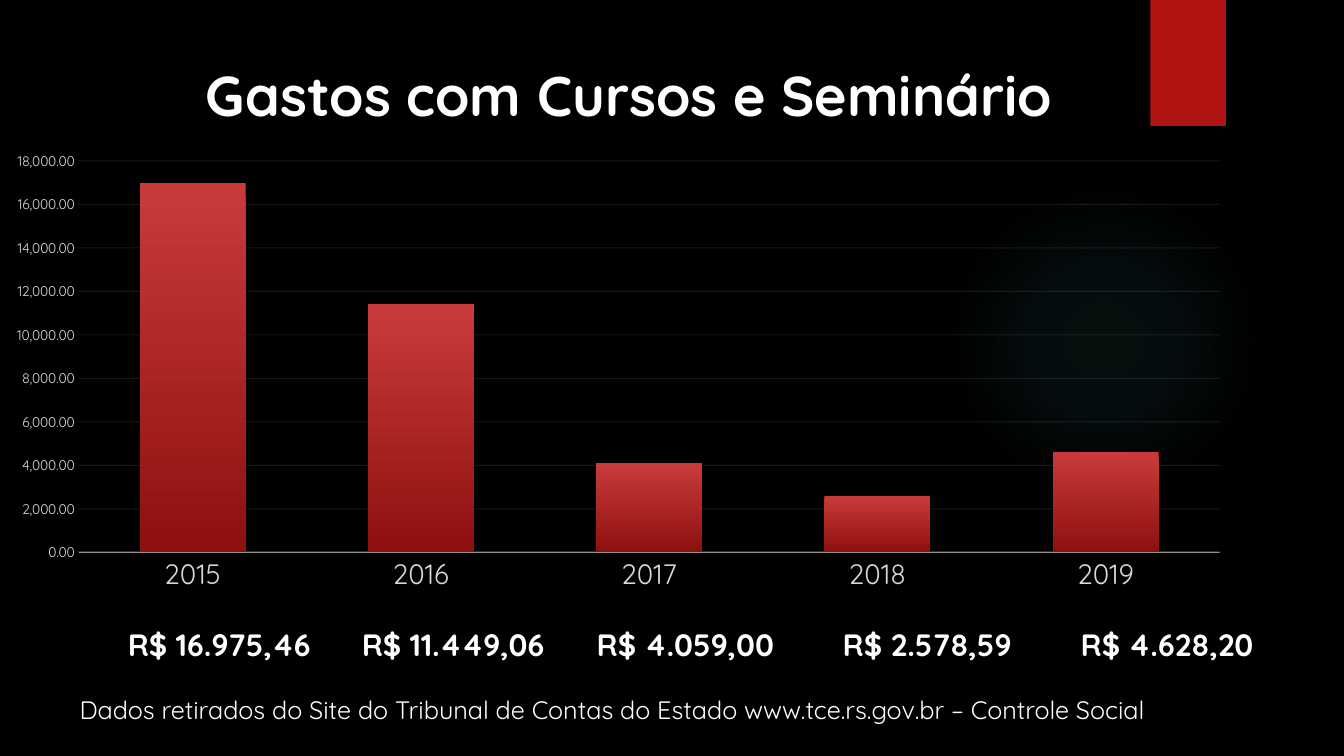
from dataclasses import dataclass

from lxml.etree import SubElement
from pptx import Presentation
from pptx.chart.data import CategoryChartData
from pptx.dml.color import RGBColor
from pptx.enum.chart import XL_CHART_TYPE as ChartType, XL_TICK_MARK as TickMark
from pptx.enum.shapes import MSO_SHAPE as Preset
from pptx.enum.text import MSO_ANCHOR as Anchor, MSO_AUTO_SIZE as AutoSize, PP_ALIGN as Align
from pptx.oxml import parse_xml
from pptx.oxml.ns import nsdecls, qn
from pptx.util import Emu, Pt

PX = 9144
FONT = "Quicksand"
WHITE, BLACK, RED = "FFFFFF", "000000", "B01513"
AXIS_TEXT, AXIS_LINE, GLOW = "D9D9D9", "F2F2F2", "50B9C1"
BAR_GRADIENT = ("C93B3A", "8D110F")
GLOW_STOPS = ((0, 7), (36, 6), (69, 0))


@dataclass(frozen=True)
class Box:
    left: int
    top: int
    width: int
    height: int

    def emu(self) -> tuple:
        return tuple(px(n) for n in (self.left, self.top, self.width, self.height))


@dataclass(frozen=True)
class Expense:
    year: str
    bar: int
    label: str
    tab: int


EXPENSES = (
    Expense("2015", 17000, "R$ 16.975,46", 0),
    Expense("2016", 11400, "R$ 11.449,06", 232),
    Expense("2017", 4100, "R$ 4.059,00", 465),
    Expense("2018", 2600, "R$ 2.578,59", 709),
    Expense("2019", 4600, "R$ 4.628,20", 945),
)


def px(length: int) -> Emu:
    return Emu(length * PX)


def color(value: str) -> RGBColor:
    return RGBColor.from_string(value)


def set_font(font, size: float, value: str, bold: bool = False) -> None:
    font.name, font.size, font.bold = FONT, Pt(size), bold
    font.color.rgb = color(value)


def write_text(shape, text: str, *, size: float, bold: bool = False, tabs: tuple = ()) -> None:
    frame = shape.text_frame
    frame.word_wrap = True
    frame.auto_size = AutoSize.NONE
    frame.vertical_anchor = Anchor.TOP
    frame.text = text
    paragraph = frame.paragraphs[0]
    paragraph.alignment = Align.LEFT
    if tabs:
        tab_list = SubElement(paragraph._p.get_or_add_pPr(), qn("a:tabLst"))
        for position in tabs:
            SubElement(tab_list, qn("a:tab"), pos=str(px(position)), algn="l")
    for run in paragraph.runs:
        set_font(run.font, size, WHITE, bold)


def add_preset(slide, preset: Preset, box: Box, fill: str):
    shape = slide.shapes.add_shape(preset, *box.emu())
    shape.shadow.inherit = False
    shape.fill.solid()
    shape.fill.fore_color.rgb = color(fill)
    shape.line.fill.background()
    return shape


def add_glow(slide, box: Box) -> None:
    shape = add_preset(slide, Preset.OVAL, box, GLOW)
    stops = "".join(
        f'<a:gs pos="{position * 1000}"><a:srgbClr val="{GLOW}">'
        f'<a:alpha val="{alpha * 1000}"/></a:srgbClr></a:gs>'
        for position, alpha in GLOW_STOPS
    )
    gradient = parse_xml(
        f'<a:gradFill {nsdecls("a")}><a:gsLst>{stops}</a:gsLst><a:path path="circle">'
        '<a:fillToRect l="50000" t="50000" r="50000" b="50000"/></a:path></a:gradFill>'
    )
    properties = shape._element.spPr
    properties.replace(properties.find(qn("a:solidFill")), gradient)


def style_line(owner, element, path: str, width: float, alpha: int) -> None:
    line = owner.format.line
    line.width = Pt(width)
    line.color.rgb = color(AXIS_LINE)
    for node in element.xpath(path):
        SubElement(node, qn("a:alpha"), val=str(alpha * 1000))


def clear_background():
    return parse_xml(
        f'<c:spPr {nsdecls("c", "a")}><a:noFill/><a:ln><a:noFill/></a:ln></c:spPr>'
    )


def place_plot(chart, x: float, y: float, w: float, h: float) -> None:
    area = chart._chartSpace.chart.plotArea
    for layout in area.xpath("c:layout"):
        area.remove(layout)
    modes = '<c:layoutTarget val="inner"/><c:xMode val="edge"/><c:yMode val="edge"/>'
    sizes = "".join(f'<c:{key} val="{n}"/>' for key, n in zip("xywh", (x, y, w, h)))
    area.insert(0, parse_xml(
        f'<c:layout {nsdecls("c")}><c:manualLayout>{modes}{sizes}</c:manualLayout></c:layout>'
    ))
    area.append(clear_background())
    chart._chartSpace.chart.addnext(clear_background())


def add_expense_chart(slide, box: Box) -> None:
    data = CategoryChartData(number_format="#,##0.00")
    data.categories = [expense.year for expense in EXPENSES]
    data.add_series("Series 1", [expense.bar for expense in EXPENSES])
    chart = slide.shapes.add_chart(ChartType.COLUMN_CLUSTERED, *box.emu(), data).chart
    chart.has_title = chart.has_legend = False
    set_font(chart.font, 10, WHITE)
    place_plot(chart, 0.034, 0.091, 0.925, 0.757)

    plot = chart.plots[0]
    plot.gap_width, plot.vary_by_categories = 115, False
    fill = plot.series[0].format.fill
    fill.gradient()
    fill.gradient_angle = 270
    for stop, value in zip(fill.gradient_stops, BAR_GRADIENT):
        stop.color.rgb = color(value)

    years, amounts = chart.category_axis, chart.value_axis
    for axis, size in ((years, 20), (amounts, 10)):
        axis.major_tick_mark = axis.minor_tick_mark = TickMark.NONE
        set_font(axis.tick_labels.font, size, AXIS_TEXT)
    style_line(years, years._element, "c:spPr//a:srgbClr", 1, 54)
    amounts.format.line.fill.background()
    amounts.minimum_scale, amounts.maximum_scale, amounts.major_unit = 0, 18000, 2000
    amounts.tick_labels.number_format = "#,##0.00"
    amounts.tick_labels.number_format_is_linked = False
    style_line(amounts.major_gridlines, amounts._element,
               "c:majorGridlines//a:srgbClr", 0.75, 10)


def main() -> None:
    presentation = Presentation()
    presentation.slide_width, presentation.slide_height = px(1333), px(750)
    slide = presentation.slides.add_slide(presentation.slide_layouts[5])
    slide.background.fill.solid()
    slide.background.fill.fore_color.rgb = color(BLACK)

    add_glow(slide, Box(941, 183, 308, 308))
    add_preset(slide, Preset.RECTANGLE, Box(1141, 0, 75, 125), RED)
    add_expense_chart(slide, Box(17, 113, 1243, 513))

    amounts = slide.shapes.add_textbox(*Box(117, 616, 1150, 47).emu())
    write_text(amounts, "\t".join(expense.label for expense in EXPENSES), size=22, bold=True,
               tabs=tuple(expense.tab for expense in EXPENSES[1:]))
    footnote = slide.shapes.add_textbox(*Box(69, 684, 1161, 40).emu())
    write_text(footnote, "Dados retirados do Site do Tribunal de Contas do Estado "
               "www.tce.rs.gov.br – Controle Social", size=18)

    title = slide.shapes.title
    title.left, title.top, title.width, title.height = Box(194, 55, 934, 77).emu()
    write_text(title, "Gastos com Cursos e Seminário", size=40, bold=True)
    presentation.save("out.pptx")


if __name__ == "__main__":
    main()
